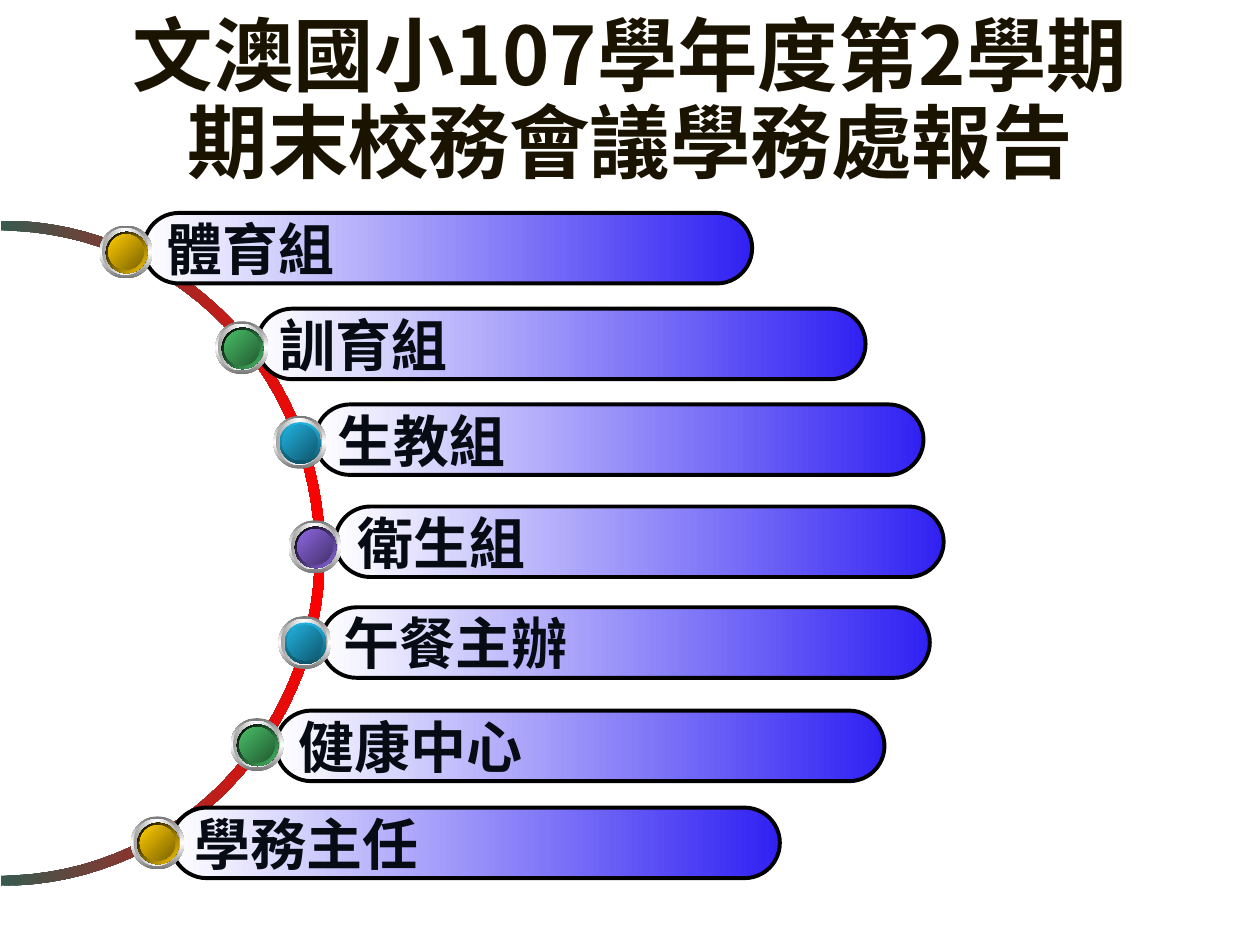
from math import cos, pi, sin

from lxml import etree
from pptx import Presentation
from pptx.dml.color import RGBColor
from pptx.enum.shapes import MSO_SHAPE as Shape
from pptx.enum.text import MSO_ANCHOR as Anchor, MSO_AUTO_SIZE as AutoSize, PP_ALIGN as Align
from pptx.oxml.ns import qn
from pptx.util import Inches, Pt

FONT = "Noto Sans CJK SC"
BLACK = RGBColor(0x00, 0x00, 0x00)
WHITE = RGBColor(0xFF, 0xFF, 0xFF)
TITLE_INK = RGBColor(0x1A, 0x13, 0x00)
LABEL_INK = RGBColor(0x06, 0x0B, 0x14)
BAR_BLUE = RGBColor(0x30, 0x21, 0xF3)
ARC_GREEN = RGBColor(0x38, 0x5A, 0x4F)
ARC_RED = RGBColor(0xFF, 0x00, 0x00)
STEEL = RGBColor(0x76, 0x76, 0x76)
SILVER = RGBColor(0xA2, 0xA2, 0xA2)

# Dot schemes: rim start, rim end, rim angle, face start, face end
GOLD_FACE = RGBColor(0xFF, 0xCC, 0x00)
GREEN_FACE = RGBColor(0x48, 0xBE, 0x67)
BLUE_FACE = RGBColor(0x21, 0xB3, 0xE1)
PURPLE_FACE = RGBColor(0x8D, 0x67, 0xE1)
GOLD = (BLACK, GOLD_FACE, 45, GOLD_FACE, RGBColor(0x7C, 0x63, 0x00))
GREEN = (BLACK, GREEN_FACE, 45, GREEN_FACE, RGBColor(0x23, 0x5C, 0x32))
BLUE = (BLUE_FACE, RGBColor(0x0F, 0x53, 0x68), 90, BLUE_FACE, RGBColor(0x10, 0x57, 0x6D))
PURPLE = (BLACK, PURPLE_FACE, 45, PURPLE_FACE, RGBColor(0x45, 0x32, 0x6D))


def fill_gradient(shape, colours, angle):
    """Fill with evenly spaced colours, the angle running clockwise."""
    shape.shadow.inherit = False
    shape.line.fill.background()
    shape.fill.gradient()
    gradient = shape._element.spPr.find(qn("a:gradFill"))
    stops = gradient.find(qn("a:gsLst"))
    for stop in list(stops):
        stops.remove(stop)
    for index, colour in enumerate(colours):
        position = 100000 * index // (len(colours) - 1)
        stop = etree.SubElement(stops, qn("a:gs"), pos=str(position))
        etree.SubElement(stop, qn("a:srgbClr"), val=str(colour))
    gradient.find(qn("a:lin")).set("ang", str(angle * 60000))


def write_text(para, text, size, colour):
    para.text = text
    for span in para.runs:
        for name, value in {"size": Pt(size), "bold": True, "name": FONT}.items():
            setattr(span.font, name, value)
        span.font.color.rgb = colour
        etree.SubElement(span._r.get_or_add_rPr(), qn("a:ea"), typeface=FONT)


deck = Presentation()
deck.slide_width, deck.slide_height = Inches(10), Inches(7.5)
page = deck.slides.add_slide(deck.slide_layouts[5])

# Title
title = page.shapes.title
place = {"left": 0, "top": 0.4, "width": 10, "height": 0.83}
for name, value in place.items():
    setattr(title, name, Inches(value))
frame_format = {"vertical_anchor": Anchor.MIDDLE, "word_wrap": True, "auto_size": AutoSize.NONE}
for name, value in frame_format.items():
    setattr(title.text_frame, name, value)
para = title.text_frame.paragraphs[0]
write_text(para, "文澳國小107學年度第2學期\v期末校務會議學務處報告", 46, TITLE_INK)
para.alignment = Align.CENTER
para.line_spacing = 0.9

# Half ring: outer edge downwards, inner edge back up
STEPS = 60
angles = [pi * step / STEPS - pi / 2 for step in range(STEPS + 1)]
edges = [(2.57, 2.64, angles), (2.49, 2.56, angles[::-1])]
points = [
    (Inches(0.01 + across * cos(angle)), Inches(4.39 + down * sin(angle)))
    for across, down, sweep in edges
    for angle in sweep
]
builder = page.shapes.build_freeform(*points[0])
builder.add_line_segments(points[1:], close=True)
fill_gradient(builder.convert_to_shape(), [ARC_GREEN, ARC_RED], 0)

# Bars with their dots: label, bar left, bar top, dot left, dot top, scheme
ROWS = [
    ("體育組", 1.14, 1.69, 0.79, 1.79, GOLD),
    ("訓育組", 2.04, 2.45, 1.71, 2.55, GREEN),
    ("生教組", 2.5, 3.21, 2.17, 3.3, BLUE),
    ("衛生組", 2.66, 4.02, 2.29, 4.13, PURPLE),
    ("午餐主辦", 2.55, 4.82, 2.21, 4.89, BLUE),
    ("健康中心", 2.19, 5.64, 1.83, 5.7, GREEN),
    ("學務主任", 1.36, 6.41, 1.04, 6.48, GOLD),
]
for label, bar_left, bar_top, dot_left, dot_top, scheme in ROWS:
    bar = page.shapes.add_shape(
        Shape.ROUNDED_RECTANGLE, Inches(bar_left), Inches(bar_top), Inches(4.83), Inches(0.56)
    )
    bar.adjustments[0] = 0.5
    fill_gradient(bar, [WHITE, BAR_BLUE], 0)
    bar.line.color.rgb = BLACK
    bar.line.width = Pt(2.25)
    bar.text_frame.word_wrap = False
    bar.text_frame.vertical_anchor = Anchor.MIDDLE
    para = bar.text_frame.paragraphs[0]
    write_text(para, label, 32, LABEL_INK)
    para.alignment = Align.LEFT

    # Dot: concentric discs from the outer ring to the face
    rim_start, rim_end, rim_angle, face_start, face_end = scheme
    discs = [
        (0, 0.42, [STEEL, WHITE, STEEL], 90),
        (0.02, 0.37, [SILVER, WHITE, SILVER], 0),
        (0.05, 0.33, [rim_start, rim_end], rim_angle),
        (0.07, 0.28, [face_start, face_end], 45),
    ]
    dot = page.shapes.add_group_shape()
    for inset, size, colours, angle in discs:
        disc = dot.shapes.add_shape(
            Shape.OVAL, Inches(dot_left + inset), Inches(dot_top + inset), Inches(size), Inches(size)
        )
        fill_gradient(disc, colours, angle)

deck.save("out.pptx")
